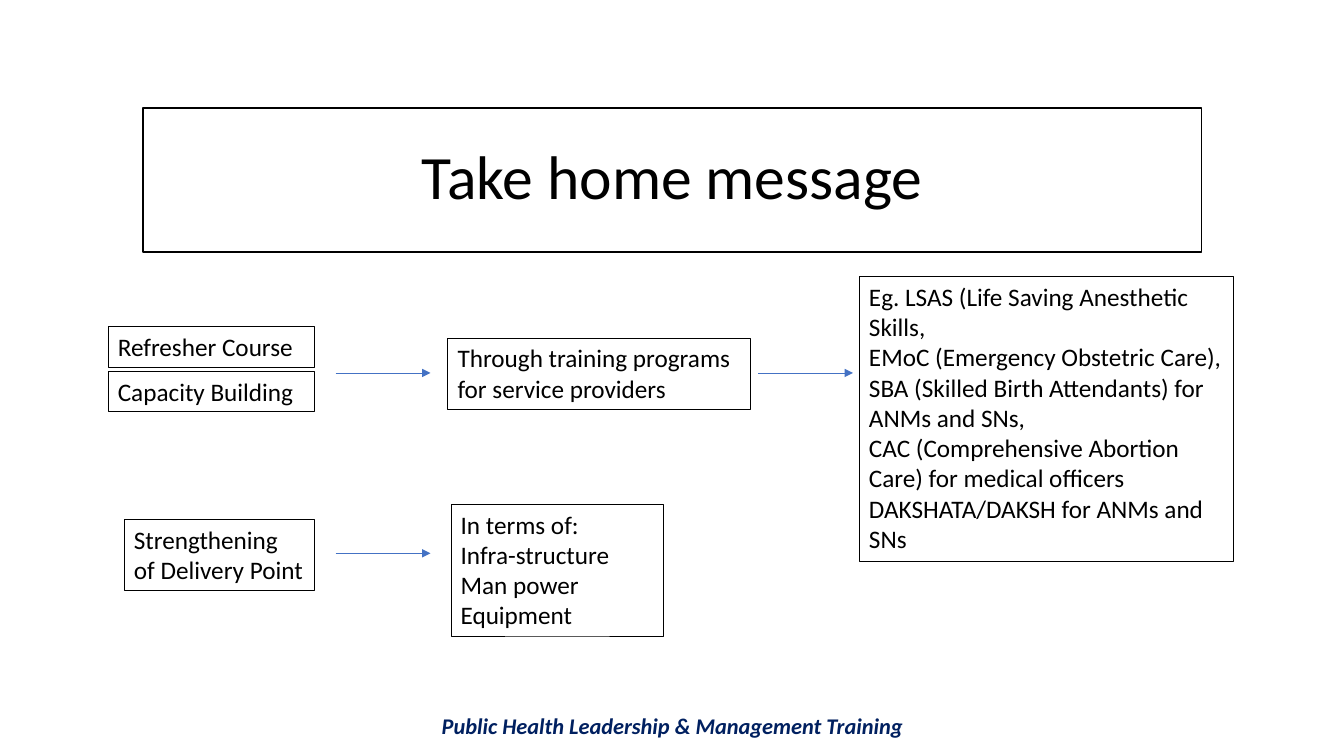
from lxml.etree import SubElement
from pptx import Presentation
from pptx.dml.color import RGBColor
from pptx.enum.shapes import MSO_CONNECTOR, MSO_SHAPE
from pptx.enum.text import MSO_ANCHOR, PP_ALIGN
from pptx.oxml.ns import qn
from pptx.util import Inches, Pt

# Content: places are (left, top, width, height) in inches
COLORS = {"ink": "000000", "footer": "002060", "arrow": "4472C4"}
FONT = "Calibri"
TITLE = ("Take home message", (1.42, 1.07, 10.5, 1.43))
FOOTER = ("Public Health Leadership & Management Training", (0.92, 7.02, 11.5, 0.37))
BOXES = [
    ((1.07, 3.24, 2.05, 0.4), ["Refresher Course"]),
    ((1.07, 3.68, 2.05, 0.4), ["Capacity Building"]),
    ((4.44, 3.35, 3, 0.71), ["Through training programs for service providers"]),
    ((8.52, 2.74, 3.71, 2.83), [
        "Eg. LSAS (Life Saving Anesthetic Skills,",
        "EMoC (Emergency Obstetric Care), SBA (Skilled Birth Attendants) for ANMs and SNs,",
        "CAC (Comprehensive Abortion Care) for medical officers",
        "DAKSHATA/DAKSH for ANMs and SNs",
    ]),
    ((1.23, 5.15, 1.89, 0.71), ["Strengthening of Delivery Point"]),
    ((4.47, 5, 2.11, 1.31), ["In terms of:", "Infra-structure", "Man power", "Equipment"]),
]
ARROW_LENGTH = 0.94
ARROW_STARTS = [(3.33, 3.7), (7.52, 3.7), (3.33, 5.49)]


def color(name):
    return RGBColor.from_string(COLORS[name])


def write(shape, lines, size, ink="ink", align=PP_ALIGN.LEFT,
          anchor=MSO_ANCHOR.TOP, emphasis=None, spacing=None):
    frame = shape.text_frame
    frame.word_wrap = True
    frame.vertical_anchor = anchor
    for index, line in enumerate(lines):
        paragraph = frame.add_paragraph() if index else frame.paragraphs[0]
        paragraph.alignment = align
        paragraph.line_spacing = spacing
        run = paragraph.add_run()
        run.text = line
        run.font.name = FONT
        run.font.size = Pt(size)
        run.font.bold = run.font.italic = emphasis
        run.font.color.rgb = color(ink)


def add_box(slide, place, line_width):
    shape = slide.shapes.add_shape(MSO_SHAPE.RECTANGLE, *map(Inches, place))
    shape.shadow.inherit = False
    shape.fill.background()
    shape.line.color.rgb = color("ink")
    shape.line.width = Pt(line_width)
    return shape


def add_arrow(slide, left, top):
    arrow = slide.shapes.add_connector(
        MSO_CONNECTOR.STRAIGHT, Inches(left), Inches(top),
        Inches(left + ARROW_LENGTH), Inches(top))
    arrow.line.color.rgb = color("arrow")
    arrow.line.width = Pt(0.5)
    SubElement(arrow.line._get_or_add_ln(), qn("a:tailEnd"), type="triangle")
    SubElement(arrow._element.spPr, qn("a:effectLst"))


def main():
    presentation = Presentation()
    presentation.slide_width = Inches(13.33)
    presentation.slide_height = Inches(7.5)
    slide = presentation.slides.add_slide(presentation.slide_layouts[6])

    # Footer and title
    text, place = FOOTER
    footer = slide.shapes.add_textbox(*map(Inches, place))
    write(footer, [text], 16, "footer", PP_ALIGN.CENTER, emphasis=True)
    text, place = TITLE
    write(add_box(slide, place, 1), [text], 44, align=PP_ALIGN.CENTER,
          anchor=MSO_ANCHOR.MIDDLE, spacing=0.9)

    # Flow of boxes and arrows
    for place, lines in BOXES:
        write(add_box(slide, place, 0.25), lines, 18)
    for left, top in ARROW_STARTS:
        add_arrow(slide, left, top)

    presentation.save("out.pptx")


if __name__ == "__main__":
    main()
